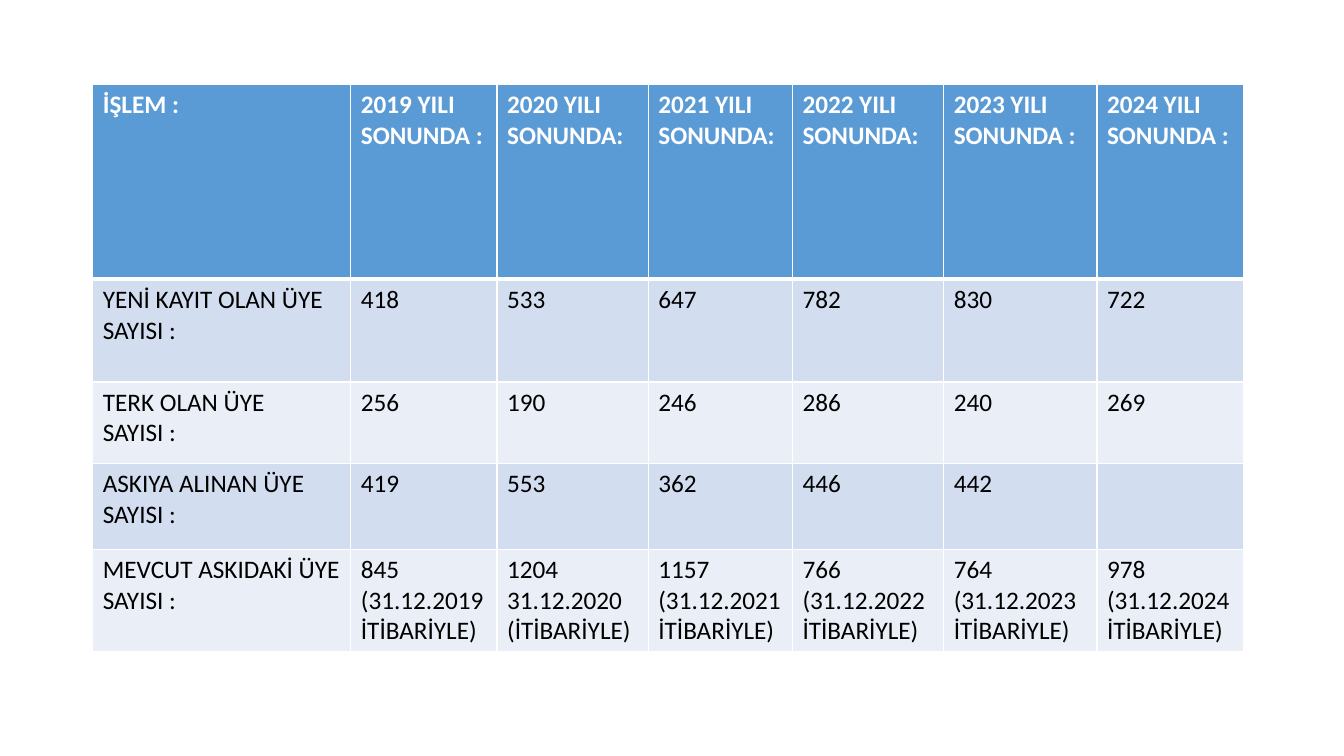
from dataclasses import dataclass
from lxml.etree import SubElement as Sub
from pptx import Presentation as Deck
from pptx.dml.color import RGBColor as Color
from pptx.oxml.ns import qn
from pptx.util import Inches, Pt


@dataclass(frozen=True)
class Theme:
    font: str = "Calibri"
    size: int = 18
    head: str = "5B9BD5"
    bands: tuple = ("D2DEEF", "EAEFF7")
    light: str = "FFFFFF"
    dark: str = "000000"
    thin: int = 1
    thick: int = 3


class Page:
    def __init__(self, deck, theme):
        self.theme = theme
        self.wide, self.high = deck.slide_width, deck.slide_height
        self.slide = deck.slides.add_slide(deck.slide_layouts[6])

    def edge(self, cell, side, width):
        line = Sub(cell._tc.get_or_add_tcPr(), qn(f"a:ln{side}"), w=str(Pt(width)))
        fill = Sub(line, qn("a:solidFill"))
        Sub(fill, qn("a:srgbClr"), val=self.theme.light)

    def cell(self, cell, text, row):
        look = self.theme
        top = row == 0
        for side in "LRTB":
            thick = (top and side == "B") or (row == 1 and side == "T")
            self.edge(cell, side, look.thick if thick else look.thin)
        cell.fill.solid()
        shade = look.head if top else look.bands[(row - 1) % 2]
        cell.fill.fore_color.rgb = Color.from_string(shade)
        para = cell.text_frame.paragraphs[0]
        para.font.size = Pt(look.size)
        if text:
            run = para.add_run()
            run.text = text
            run.font.name = look.font
            run.font.size = Pt(look.size)
            run.font.bold = top
            run.font.color.rgb = Color.from_string(look.light if top else look.dark)

    def table(self, left, top, width, height, cols, rows, data):
        wide, high = self.wide * width, self.high * height
        frame = self.slide.shapes.add_table(
            len(rows), len(cols), int(self.wide * left), int(self.high * top),
            int(wide), int(high))
        grid = frame.table
        for col, part in zip(grid.columns, cols):
            col.width = int(wide * part / sum(cols))
        for row, part in zip(grid.rows, rows):
            row.height = int(high * part / sum(rows))
        for y, line in enumerate(data):
            for x, text in enumerate(line):
                self.cell(grid.cell(y, x), text, y)


HEAD = ["İŞLEM :"] + [
    f"{year} YILI SONUNDA{'' if year in (2020, 2021, 2022) else ' '}:"
    for year in range(2019, 2025)]

DATA = [
    HEAD,
    ["YENİ KAYIT OLAN ÜYE SAYISI :", "418", "533", "647", "782", "830", "722"],
    ["TERK OLAN ÜYE SAYISI :", "256", "190", "246", "286", "240", "269"],
    ["ASKIYA ALINAN ÜYE SAYISI :", "419", "553", "362", "446", "442", ""],
    ["MEVCUT ASKIDAKİ ÜYE SAYISI :",
     "845 (31.12.2019 İTİBARİYLE)", "1204 31.12.2020 (İTİBARİYLE)",
     "1157 (31.12.2021 İTİBARİYLE)", "766 (31.12.2022 İTİBARİYLE)",
     "764 (31.12.2023 İTİBARİYLE)", "978 (31.12.2024 İTİBARİYLE)"],
]


def main():
    deck = Deck()
    deck.slide_width, deck.slide_height = Inches(13.33), Inches(7.5)
    page = Page(deck, Theme())
    page.table(
        0.92 / 13.33, 0.84 / 7.5, 11.41 / 13.33, 5.63 / 7.5,
        cols=(2.56, 1.45, 1.5, 1.43, 1.5, 1.52, 1.45),
        rows=(1.93, 1.02, 0.81, 0.85, 1.02), data=DATA)
    deck.save("out.pptx")


if __name__ == "__main__":
    main()
